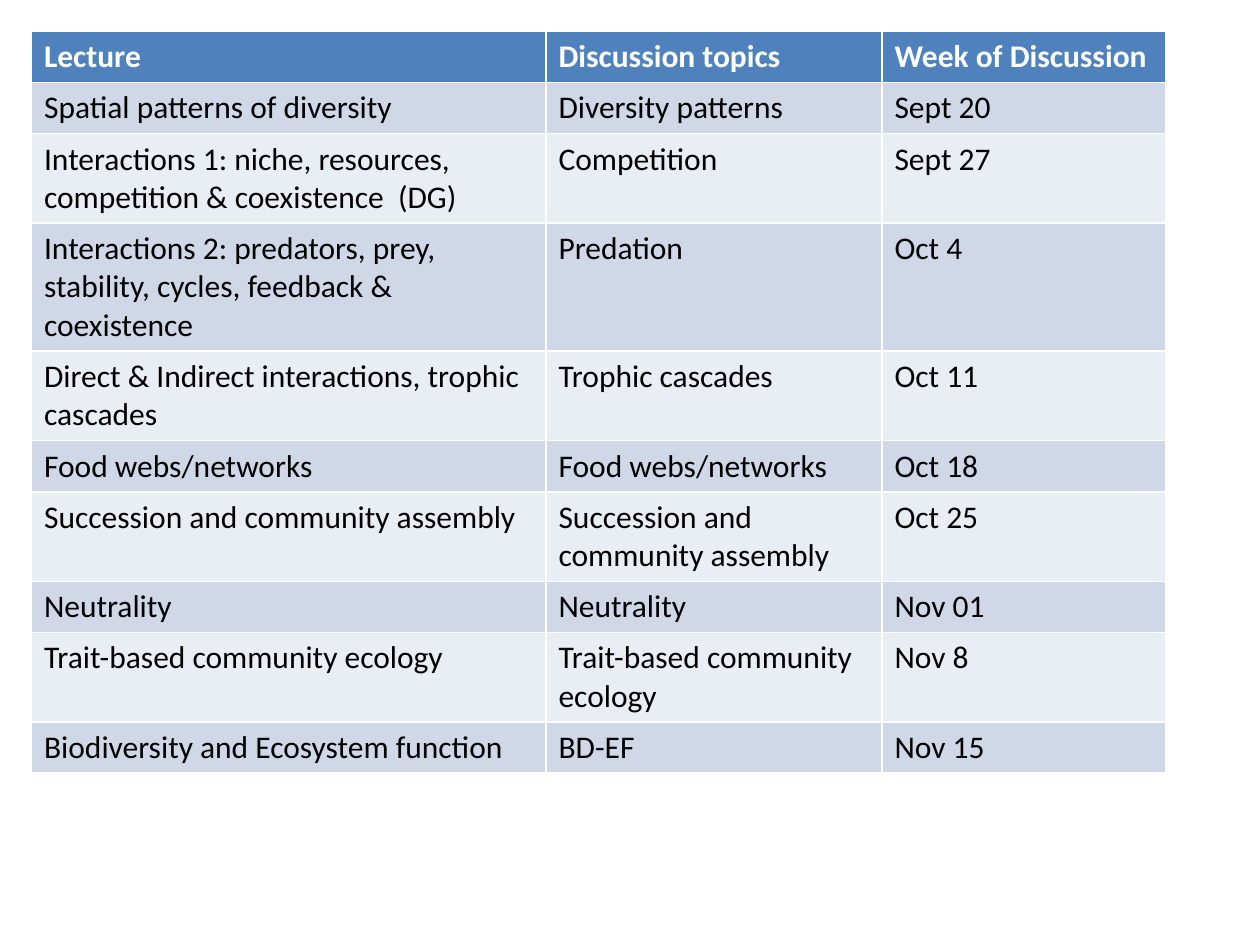
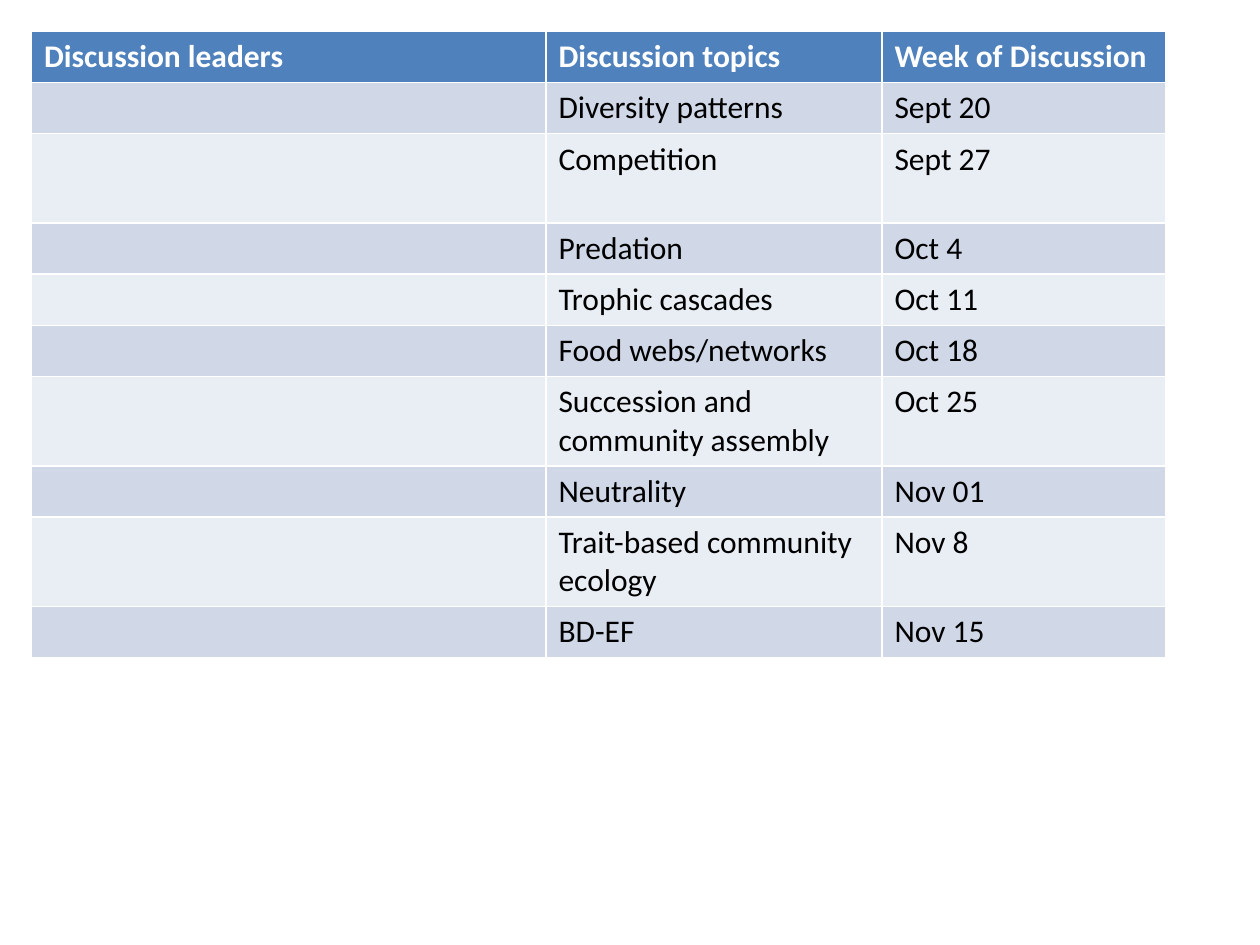
"""Build two course schedule slides, each holding one banded table."""
from dataclasses import dataclass

from pptx import Presentation
from pptx.dml.color import RGBColor
from pptx.slide import Slide
from pptx.table import _Cell
from pptx.util import Inches, Pt

HEADER_BLUE = RGBColor(0x4F, 0x81, 0xBD)
BAND_DARK = RGBColor(0xD0, 0xD8, 0xE8)
BAND_LIGHT = RGBColor(0xE9, 0xED, 0xF4)
WHITE = RGBColor(0xFF, 0xFF, 0xFF)
BLACK = RGBColor(0x00, 0x00, 0x00)

FONT_NAME = "Calibri"
FONT_SIZE = Pt(18)

SLIDE_WIDTH = Inches(10)
SLIDE_HEIGHT = Inches(7.5)
GRID_UNIT = SLIDE_WIDTH // 120
MARGIN = 3 * GRID_UNIT
COLUMN_UNITS = (49, 32, 27)
LINE_HEIGHT = Inches(0.305)
CELL_PADDING = Inches(0.1)
BLANK_LAYOUT = 6


@dataclass(frozen=True)
class Week:
    """One week of the course: its lecture, discussion topic and date."""

    lecture: str
    topic: str
    date: str


@dataclass(frozen=True)
class Schedule:
    """One slide's table: first heading, its entries and lines of text per row."""

    heading: str
    entries: tuple[str, ...]
    row_lines: tuple[int, ...]


WEEKS = (
    Week("Spatial patterns of diversity", "Diversity patterns", "Sept 20"),
    Week("Interactions 1: niche, resources, competition & coexistence  (DG)",
         "Competition", "Sept 27"),
    Week("Interactions 2: predators, prey, stability, cycles, feedback & coexistence",
         "Predation", "Oct 4"),
    Week("Direct & Indirect interactions, trophic cascades", "Trophic cascades", "Oct 11"),
    Week("Food webs/networks", "Food webs/networks", "Oct 18"),
    Week("Succession and community assembly", "Succession and community assembly", "Oct 25"),
    Week("Neutrality", "Neutrality", "Nov 01"),
    Week("Trait-based community ecology", "Trait-based community ecology", "Nov 8"),
    Week("Biodiversity and Ecosystem function", "BD-EF", "Nov 15"),
)

SCHEDULES = (
    Schedule("Lecture", tuple(week.lecture for week in WEEKS),
             (1, 1, 2, 3, 2, 1, 2, 1, 2, 1)),
    Schedule("Discussion leaders", ("",) * len(WEEKS),
             (1, 1, 2, 1, 1, 1, 2, 1, 2, 1)),
)


def fill_cell(cell: _Cell, text: str, row_number: int) -> None:
    """Colour a cell by its row and write its text."""
    is_header = row_number == 0
    band = BAND_DARK if row_number % 2 else BAND_LIGHT
    cell.fill.solid()
    cell.fill.fore_color.rgb = HEADER_BLUE if is_header else band
    para = cell.text_frame.paragraphs[0]
    para.font.size = FONT_SIZE
    if text:
        span = para.add_run()
        span.text = text
        span.font.name = FONT_NAME
        span.font.size = FONT_SIZE
        span.font.bold = is_header
        span.font.color.rgb = WHITE if is_header else BLACK


def add_schedule(page: Slide, schedule: Schedule) -> None:
    """Draw a schedule table in the top left corner of the page."""
    rows = [(schedule.heading, "Discussion topics", "Week of Discussion")]
    rows += [(entry, week.topic, week.date)
             for entry, week in zip(schedule.entries, WEEKS)]
    heights = [CELL_PADDING + lines * LINE_HEIGHT for lines in schedule.row_lines]
    table = page.shapes.add_table(
        len(rows), len(COLUMN_UNITS), MARGIN, MARGIN,
        sum(COLUMN_UNITS) * GRID_UNIT, sum(heights)).table
    for column, units in zip(table.columns, COLUMN_UNITS):
        column.width = units * GRID_UNIT
    for row_number, (texts, height) in enumerate(zip(rows, heights)):
        row = table.rows[row_number]
        row.height = height
        for cell, text in zip(row.cells, texts):
            fill_cell(cell, text, row_number)


def main() -> None:
    """Create the deck and save it."""
    deck = Presentation()
    deck.slide_width = SLIDE_WIDTH
    deck.slide_height = SLIDE_HEIGHT
    for schedule in SCHEDULES:
        page = deck.slides.add_slide(deck.slide_layouts[BLANK_LAYOUT])
        add_schedule(page, schedule)
    deck.save("out.pptx")


if __name__ == "__main__":
    main()
